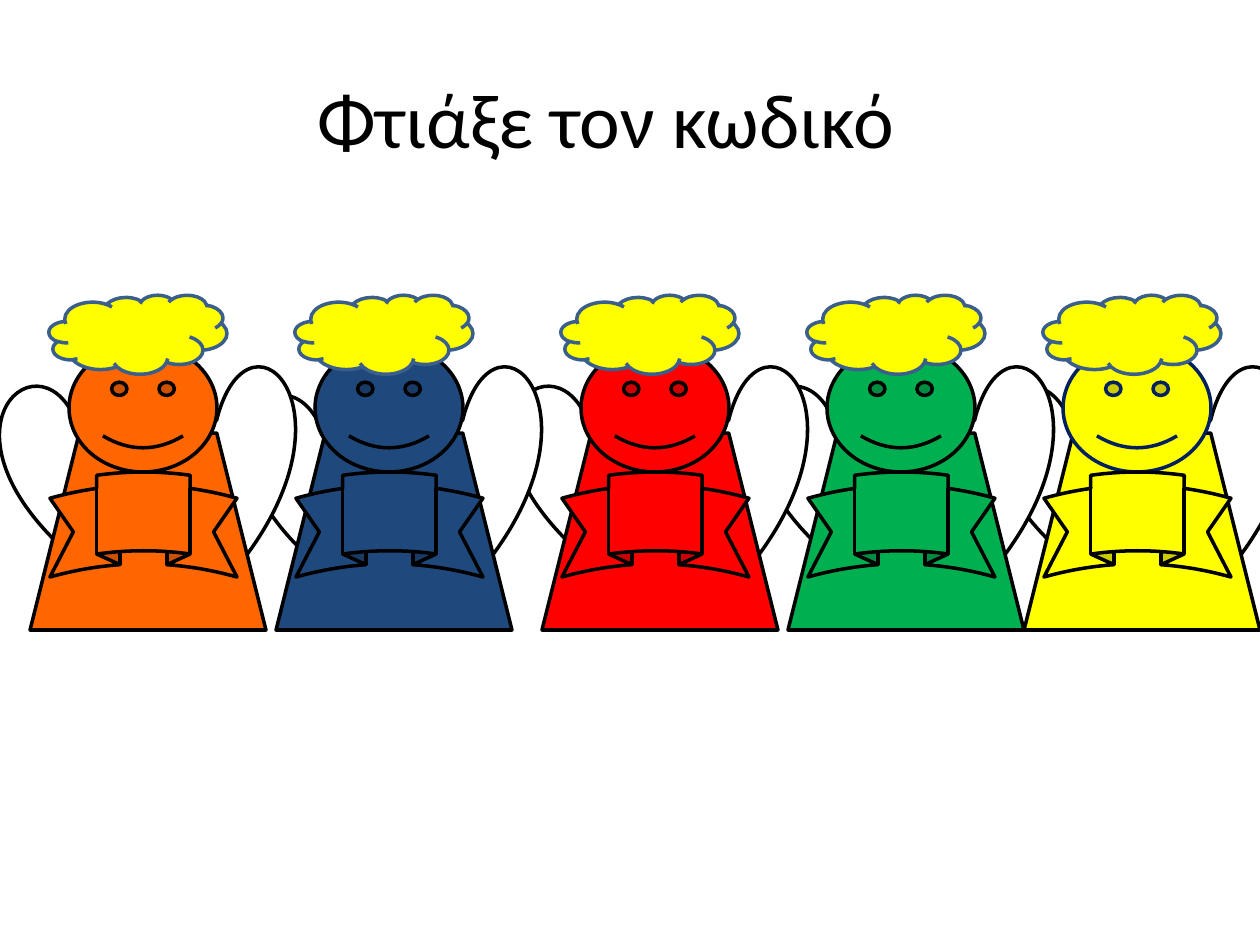
from pptx import Presentation
from pptx.dml.color import RGBColor
from pptx.enum.shapes import MSO_SHAPE
from pptx.enum.text import MSO_ANCHOR, PP_ALIGN
from pptx.util import Emu, Pt

HEART = MSO_SHAPE.HEART
TRAPEZOID = MSO_SHAPE.TRAPEZOID
SMILEY = MSO_SHAPE.SMILEY_FACE
CLOUD = MSO_SHAPE.CLOUD
RIBBON = MSO_SHAPE.CURVED_UP_RIBBON
MIDDLE = MSO_ANCHOR.MIDDLE
CENTER = PP_ALIGN.CENTER

EMU_PER_PX = 914400 / 126
BLACK, WHITE, YELLOW = "000000", "FFFFFF", "FFFF00"
HAIR_LINE = "3A5F8C"

# left edge of the robe, robe colour, face outline, top of the left wing
ANGELS = [
    (30, "FF6600", BLACK, 384),
    (276, "1F497D", BLACK, 393),
    (542, "FF0000", BLACK, 384),
    (788, "00B050", BLACK, 384),
    (1024, YELLOW, "002060", 384),
]


def px(length):
    return Emu(round(length * EMU_PER_PX))


def rgb(code):
    return RGBColor.from_string(code)


def add_part(slide, kind, left, top, width, height, fill, line=BLACK):
    part = slide.shapes.add_shape(kind, px(left), px(top), px(width), px(height))
    part.shadow.inherit = False
    part.fill.solid()
    part.fill.fore_color.rgb = rgb(fill)
    part.line.color.rgb = rgb(line)
    part.line.width = Pt(2)


def add_title(slide, wording):
    title = slide.shapes.title
    title.left, title.top, title.width, title.height = map(px, (39, 39, 1134, 158))
    frame = title.text_frame
    frame.text = wording
    frame.vertical_anchor = MIDDLE
    heading = frame.paragraphs[0]
    heading.alignment = CENTER
    heading.font.name = "Calibri"
    heading.font.size = Pt(44)
    heading.font.color.rgb = rgb(BLACK)


def add_left_wing(slide, left, top):
    add_part(slide, HEART, left - 30, top, 157, 178, WHITE)


def add_angel(slide, left, colour, face_line):
    """Add the right wing, robe, face, hair and ribbon, from back to front."""
    add_part(slide, HEART, left + 108, 364, 157, 227, WHITE)
    add_part(slide, TRAPEZOID, left, 433, 236, 197, colour)
    add_part(slide, SMILEY, left + 39, 344, 148, 128, colour, face_line)
    add_part(slide, CLOUD, left + 19, 295, 178, 79, YELLOW, HAIR_LINE)
    add_part(slide, RIBBON, left + 20, 472, 187, 105, colour)


def main():
    deck = Presentation()
    deck.slide_width, deck.slide_height = px(1260), px(945)
    slide = deck.slides.add_slide(deck.slide_layouts[5])
    add_title(slide, "Φτιάξε τον κωδικό")
    for left, _, _, wing_top in reversed(ANGELS):
        add_left_wing(slide, left, wing_top)
    for left, colour, face_line, _ in ANGELS:
        add_angel(slide, left, colour, face_line)
    deck.save("out.pptx")


if __name__ == "__main__":
    main()
